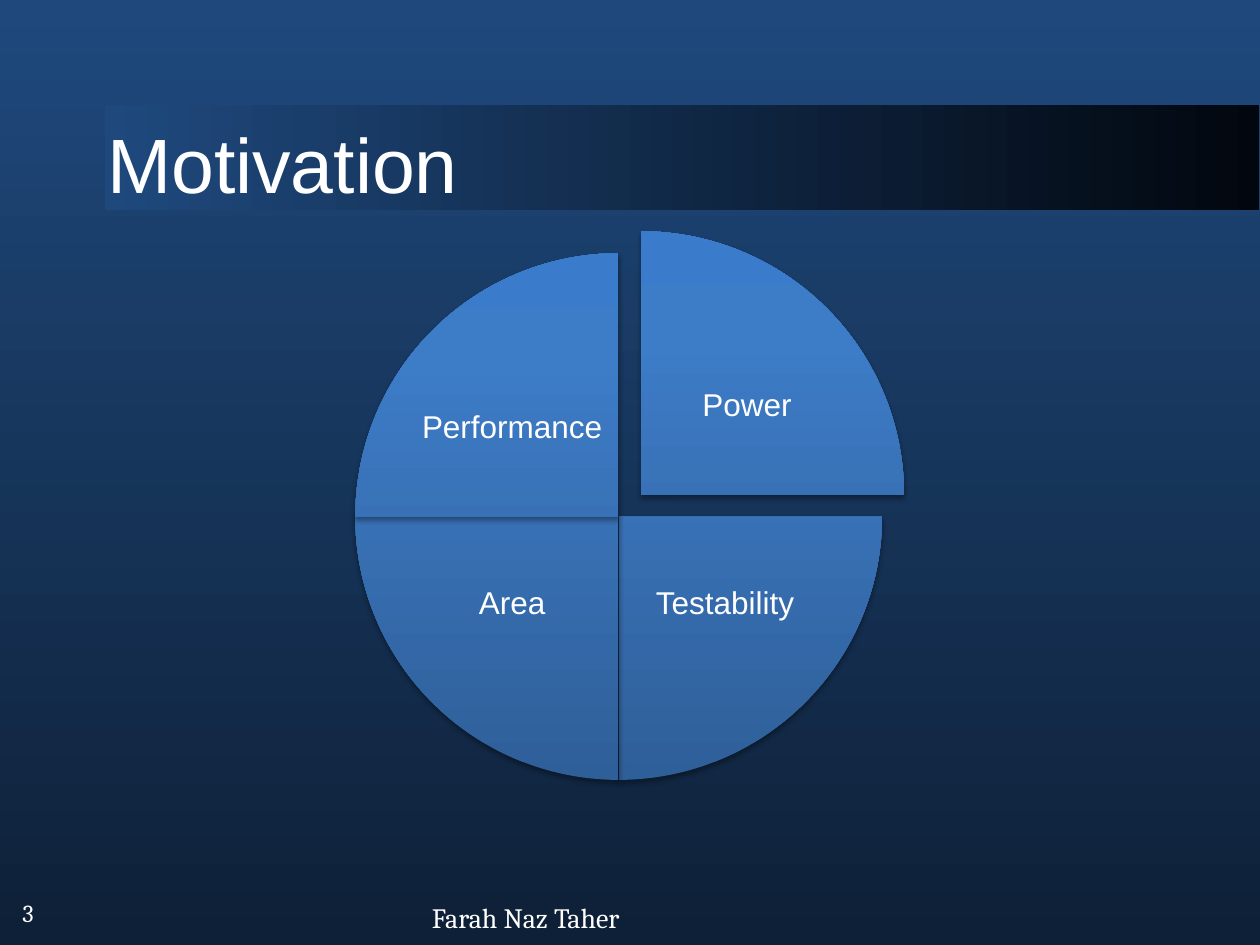
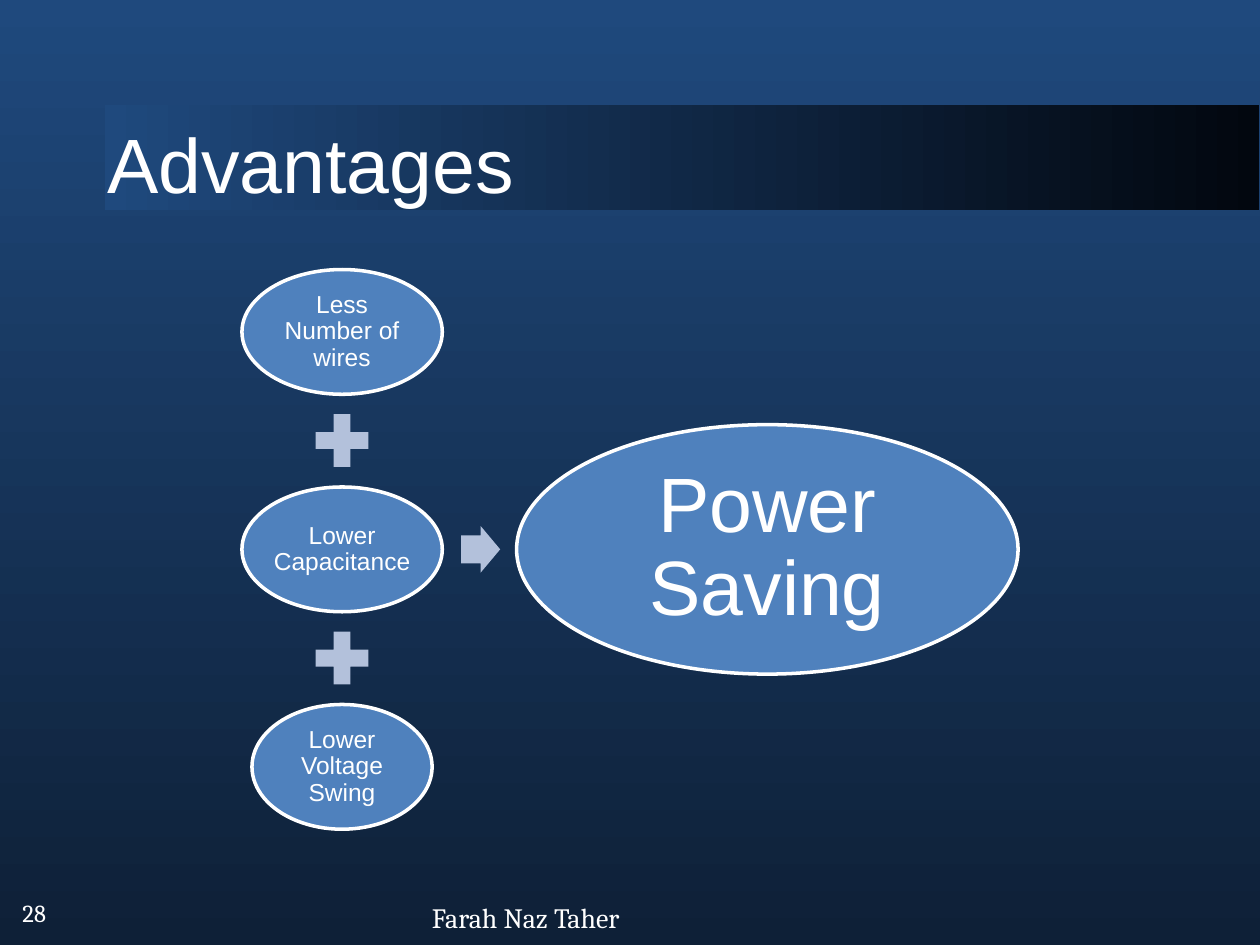
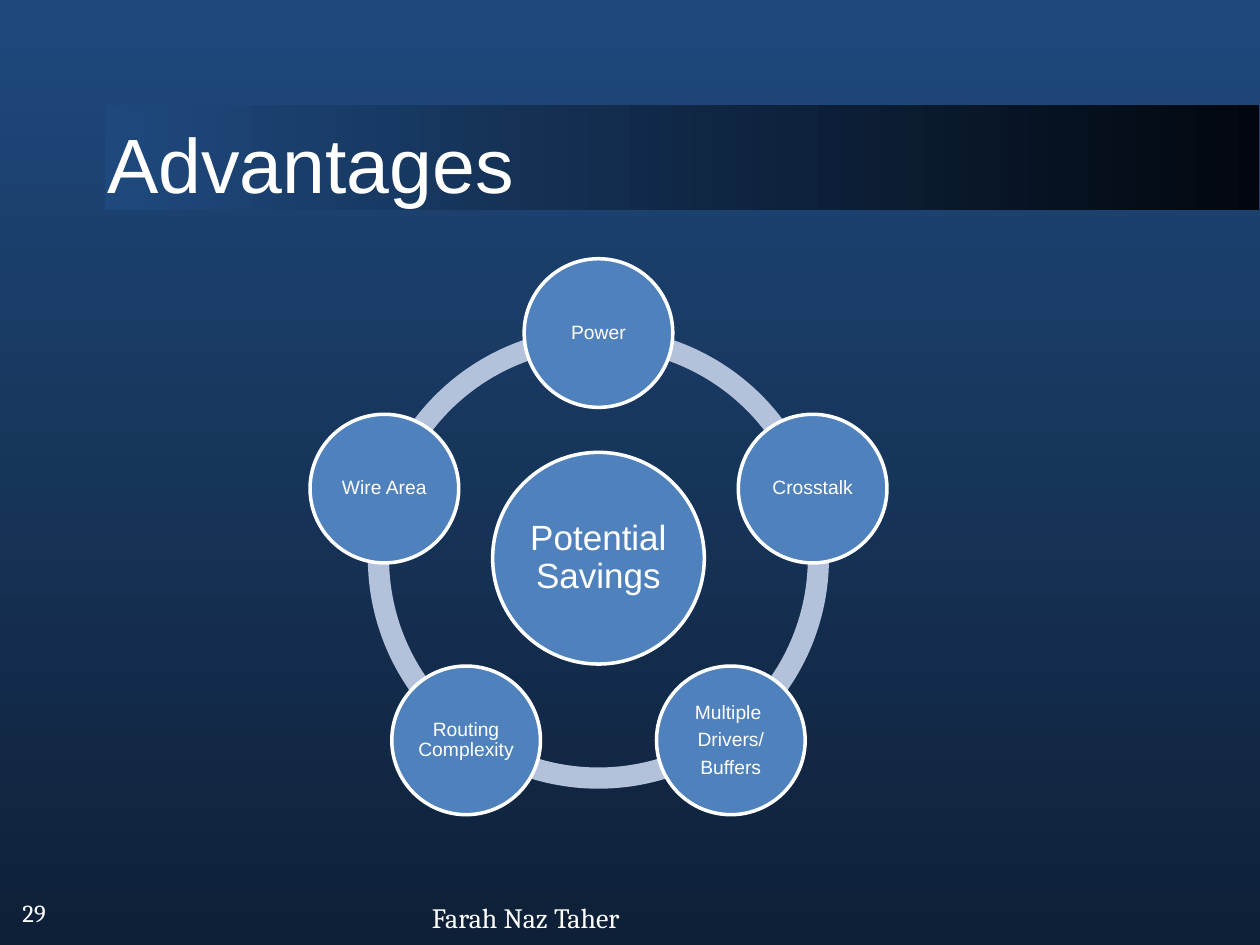
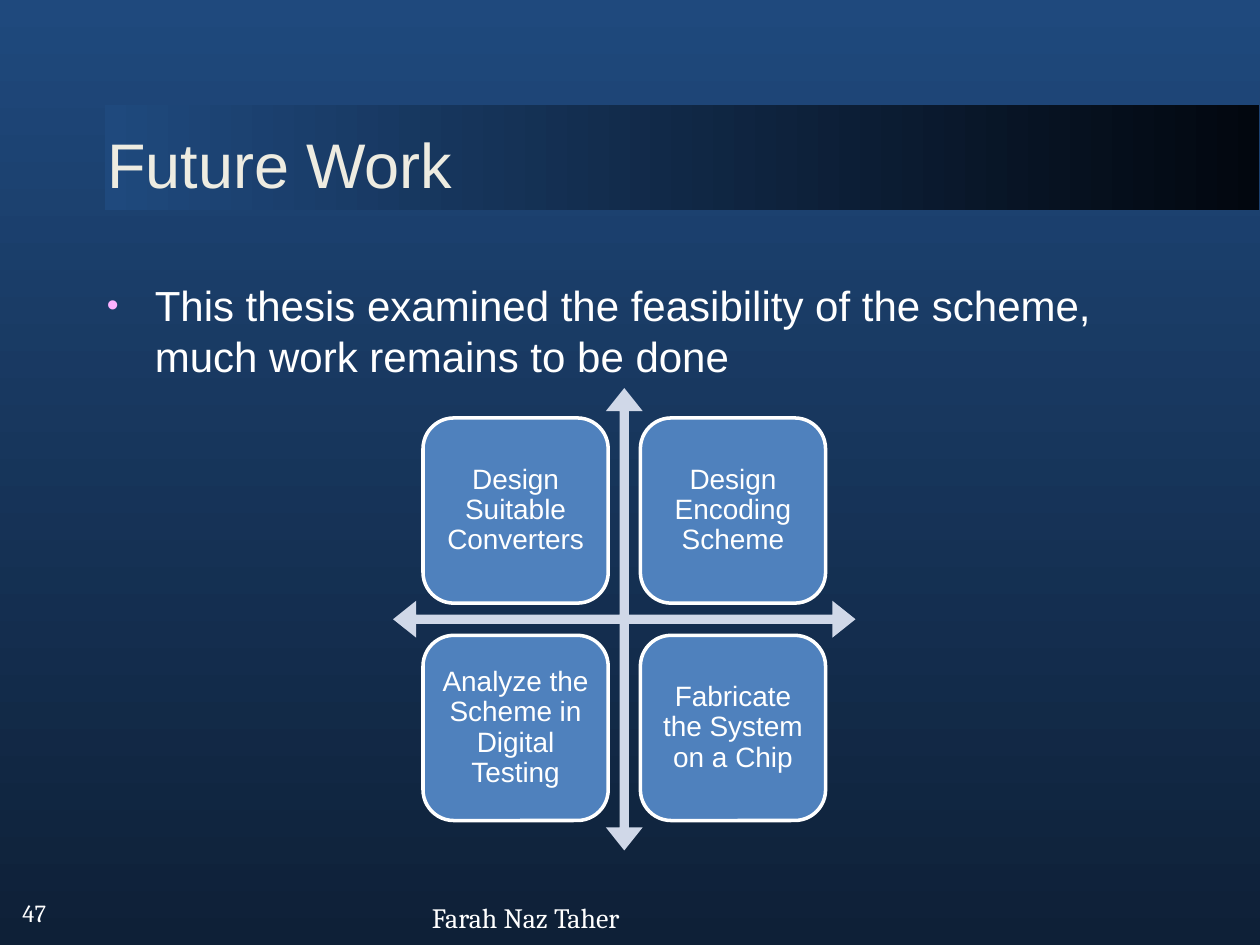
from collections import namedtuple
from copy import deepcopy
from math import cos, radians, sin

from lxml import etree
from pptx import Presentation
from pptx import util as u
from pptx.dml import color
from pptx.enum import shapes, text
from pptx.oxml import ns

COLUMNS, ROWS = 100, 75
CELL = u.Inches(0.1)
WHITE, CREAM, NAVY, DEEP, BLACK = "FFFFFF", "EEECE1", "1F497D", "0E2037", "02070F"
BLUE, LINK, AXES, BULLET = "4F81BD", "B3C1DB", "D0D8E8", "FEB2FF"
SLICE_STOPS = [(0, "2F5F99"), (0.8, "3D7CC7"), (1, "3A7CCB")]
SHAPE = shapes.MSO_SHAPE
LEFT, CENTER = text.PP_ALIGN.LEFT, text.PP_ALIGN.CENTER
TOP, MIDDLE = text.MSO_ANCHOR.TOP, text.MSO_ANCHOR.MIDDLE


class Box(namedtuple("Box", "left top width height")):
    def around(self, dx, dy, width, height):
        return Box(self.left + self.width / 2 + dx - width / 2,
                   self.top + self.height / 2 + dy - height / 2, width, height)

    def emu(self):
        return [round(value * CELL) for value in self]


BAND = Box(8.33, 8.33, 91.6, 8.33)
TITLE = Box(7.5, 6.7, 85, 12.5)
NUMBER = Box(0.8, 70.8, 4.2, 3.4)
AUTHOR = Box(33.3, 71, 18.3, 3.7)
BODY = Box(7.5, 21.7, 82.5, 40.8)
PIE = Box(28.2, 20.1, 41.8, 41.8)
SUM = Box(19.2, 21.4, 61.6, 44.4)
RING = Box(29.2, 26, 36.6, 36.6)
MATRIX = Box(31.2, 30.8, 36.7, 36.7)


def rgb(value):
    return color.RGBColor.from_string(value)


def gradient(fill, first, last, angle):
    fill.gradient()
    fill.gradient_angle = angle
    for stop, (position, value) in zip(fill.gradient_stops, (first, last)):
        stop.position = position
        stop.color.rgb = rgb(value)


def write(frame, words, size, font="Arial", ink=WHITE, align=CENTER, anchor=MIDDLE,
          inset=(0.03, 0.03), spacing=0.9, after=0, wrap=True):
    frame.auto_size = text.MSO_AUTO_SIZE.NONE
    frame.word_wrap = wrap
    frame.vertical_anchor = anchor
    frame.margin_left = frame.margin_right = u.Inches(inset[0])
    frame.margin_top = frame.margin_bottom = u.Inches(inset[1])
    frame.text = words
    for paragraph in frame.paragraphs:
        paragraph.alignment = align
        paragraph.line_spacing = spacing
        paragraph.space_before = u.Pt(0)
        paragraph.space_after = u.Pt(after)
        for run in paragraph.runs:
            run.font.name = font
            run.font.size = u.Pt(size)
            run.font.color.rgb = rgb(ink)


def label(slide, box, words, size, **style):
    frame = slide.shapes.add_textbox(*box.emu()).text_frame
    write(frame, words, size, **style)
    return frame


def figure(slide, kind, box, fill=None, outline=None, adjust=()):
    shape = slide.shapes.add_shape(kind, *box.emu())
    shape.shadow.inherit = False
    for index, value in enumerate(adjust):
        shape.adjustments[index] = value
    if fill:
        shape.fill.solid()
        shape.fill.fore_color.rgb = rgb(fill)
    if outline:
        shape.line.color.rgb = rgb(outline)
        shape.line.width = u.Pt(2)
    else:
        shape.line.fill.background()
    return shape


def node(slide, kind, box, words, size, **style):
    write(figure(slide, kind, box, BLUE, WHITE).text_frame, words, size, **style)


def add_band(slide, layout):
    band = figure(slide, SHAPE.RECTANGLE, BAND)
    gradient(band.fill, (0, NAVY), (1, BLACK), 0)
    layout.shapes[0]._element.addprevious(band._element)


def add_page(deck, layout, heading, number, size=44, ink=WHITE):
    slide = deck.slides.add_slide(layout)
    title = slide.shapes.title
    title.left, title.top, title.width, title.height = TITLE.emu()
    plain = dict(align=LEFT, inset=(0.1, 0.05), spacing=1)
    write(title.text_frame, heading, size, ink=ink, **plain)
    footer = dict(plain, font="Cambria", anchor=TOP, wrap=False)
    label(slide, NUMBER, number, 14, **footer)
    label(slide, AUTHOR, "Farah Naz Taher", 16, **footer)
    return slide


def shade_slice(piece):
    gradient(piece.fill, SLICE_STOPS[0], SLICE_STOPS[1], 90)
    properties = piece._element.spPr
    stops = properties.find(".//" + ns.qn("a:gsLst"))
    stops.append(deepcopy(stops[-1]))
    position, value = SLICE_STOPS[2]
    piece.fill.gradient_stops[2].position = position
    piece.fill.gradient_stops[2].color.rgb = rgb(value)
    shadow = etree.SubElement(properties.find(ns.qn("a:effectLst")), ns.qn("a:outerShdw"),
                              blurRad=str(u.Pt(3.1)), dist=str(u.Pt(1.8)),
                              dir="5400000", rotWithShape="0")
    black = etree.SubElement(shadow, ns.qn("a:srgbClr"), val="000000")
    etree.SubElement(black, ns.qn("a:alpha"), val="35000")


def draw_pie(slide, box):
    quarter, pulled = 54, 1.75
    goals = [("Power", 162, 1, -1), ("Testability", 0, 1, 1),
             ("Area", 54, -1, 1), ("Performance", 108, -1, -1)]
    for goal, start, across, down in goals:
        shift = pulled if goal == "Power" else 0
        piece = figure(slide, SHAPE.PIE, box.around(shift, -shift, box.width, box.height),
                       adjust=(start, (start + quarter) % 216))
        shade_slice(piece)
        label(slide, box.around(across * 8.45 + shift, down * 7 - shift, 15.4, 12.4), goal, 18)


def draw_sum(slide, box):
    column, step = -22.85, 8.63
    terms = [("Less Number of wires", 15.9), ("Lower Capacitance", 15.9),
             ("Lower Voltage Swing", 14.3)]
    for row, (term, width) in enumerate(terms):
        middle = (row - 1) * 2 * step
        if row:
            figure(slide, SHAPE.MATH_PLUS, box.around(column, middle - step, 5.7, 5.7), LINK)
        node(slide, SHAPE.OVAL, box.around(column, middle, width, 9.9), term, 14,
             inset=(0.02, 0.02))
    figure(slide, SHAPE.RIGHT_ARROW, box.around(-11.85, 0, 3.1, 3.7), LINK, adjust=(0.6, 0.5))
    node(slide, SHAPE.OVAL, box.around(10.9, 0, 39.8, 19.8), "Power Saving", 44,
         inset=(0.06, 0.06))


def draw_ring(slide, box):
    savings = ["Power", "Crosstalk", "Multiple \nDrivers/\nBuffers",
               "Routing Complexity", "Wire Area"]
    turn = 360 / len(savings)
    angles = [270 + turn * index for index in range(len(savings))]
    for angle in angles:
        ends = [round(side % 360 * 0.6, 2) for side in (angle, angle + turn)]
        figure(slide, SHAPE.BLOCK_ARC, box, LINK, adjust=(*ends, 0.046))
    node(slide, SHAPE.OVAL, box.around(0, 0, 16.8, 16.8), "Potential Savings", 20)
    reach = 17.87
    for saving, angle in zip(savings, angles):
        place = box.around(reach * cos(radians(angle)), reach * sin(radians(angle)), 11.8, 11.8)
        node(slide, SHAPE.OVAL, place, saving, 11, inset=(0.02, 0.02), after=3.85)


def draw_bullet(slide, box, words):
    frame = label(slide, box, words, 24, align=LEFT, anchor=TOP, inset=(0.1, 0.05), spacing=1)
    indent = u.Inches(0.38)
    properties = frame.paragraphs[0]._p.get_or_add_pPr()
    properties.set("marL", str(indent))
    properties.set("indent", str(-indent))
    tint = etree.SubElement(properties, ns.qn("a:buClr"))
    etree.SubElement(tint, ns.qn("a:srgbClr"), val=BULLET)
    etree.SubElement(properties, ns.qn("a:buSzPct"), val="80000")
    etree.SubElement(properties, ns.qn("a:buFont"), typeface="Arial")
    etree.SubElement(properties, ns.qn("a:buChar"), char="•")


def draw_matrix(slide, box):
    tasks = ["Design Suitable Converters", "Design Encoding Scheme",
             "Analyze the Scheme in Digital Testing", "Fabricate the System on a Chip"]
    pitch, side = 17.25, 14.7
    figure(slide, SHAPE.QUAD_ARROW, box, AXES, adjust=(0.02, 0.04, 0.05))
    for index, task in enumerate(tasks):
        row, column = divmod(index, 2)
        place = box.around((column - 0.5) * pitch, (row - 0.5) * pitch, side, side)
        node(slide, SHAPE.ROUNDED_RECTANGLE, place, task, 16, inset=(0.07, 0.07))


def main():
    deck = Presentation()
    deck.slide_width, deck.slide_height = COLUMNS * CELL, ROWS * CELL
    gradient(deck.slide_master.background.fill, (0, NAVY), (1, DEEP), 270)
    layout = deck.slide_layouts[5]

    motivation = add_page(deck, layout, "Motivation", "3")
    add_band(motivation, layout)
    draw_pie(motivation, PIE)

    draw_sum(add_page(deck, layout, "Advantages", "28"), SUM)
    draw_ring(add_page(deck, layout, "Advantages", "29"), RING)

    future = add_page(deck, layout, "Future Work", "47", size=36, ink=CREAM)
    draw_bullet(future, BODY, "This thesis examined the feasibility of the scheme, "
                              "much work remains to be done")
    draw_matrix(future, MATRIX)
    deck.save("out.pptx")


if __name__ == "__main__":
    main()
